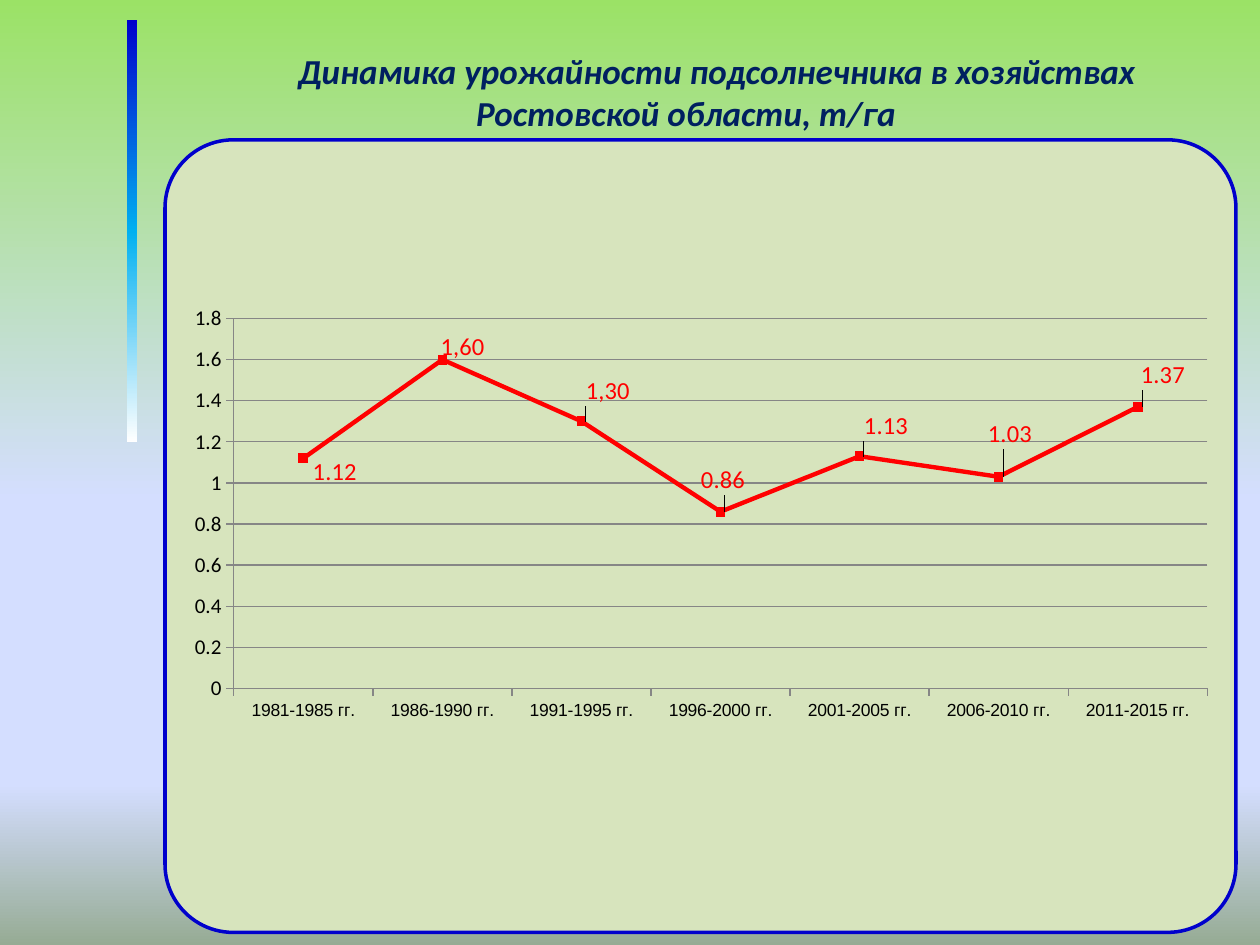
from lxml import etree
from pptx import Presentation
from pptx.chart.data import CategoryChartData
from pptx.dml.color import RGBColor
from pptx.enum import chart as ch, shapes, text
from pptx.oxml.ns import qn
from pptx.util import Inches, Pt

TITLE = "Динамика урожайности подсолнечника в хозяйствах Ростовской области, т/га"
# period, yield, custom label, label shift in inches
ROWS = [
    ("1981-1985 гг.", 1.12, None, (0, 0.11)),
    ("1986-1990 гг.", 1.6, "1,60", (-0.09, -0.1)),
    ("1991-1995 гг.", 1.3, "1,30", (-0.04, -0.24)),
    ("1996-2000 гг.", 0.86, None, (-0.23, -0.25)),
    ("2001-2005 гг.", 1.13, None, (-0.04, -0.24)),
    ("2006-2010 гг.", 1.03, None, (-0.16, -0.34)),
    ("2011-2015 гг.", 1.37, None, (-0.05, -0.25)),
]
SKY = [(0, "9BE266"), (53, "D4DEFF"), (83, "D4DEFF"), (100, "96AB94")]
BAR = [(0, "0000CC"), (50, "00B0F0"), (100, "FFFFFF")]
PLOT = {"x": 0.056, "y": 0.122, "w": 0.909, "h": 0.704}
WIDE, HIGH = 8.5, 4.17
NAVY = RGBColor(0x00, 0x20, 0x60)
BLUE = RGBColor(0x00, 0x00, 0xCC)
SAGE = RGBColor(0xD7, 0xE4, 0xBD)
RED = RGBColor(0xFF, 0x00, 0x00)
GREY = RGBColor(0x86, 0x86, 0x86)
BLACK = RGBColor(0, 0, 0)


def box(*nums):
    return [Inches(n) for n in nums]


def shade(fill, root, stops):
    """Give fill a top-to-bottom gradient; root is the element that holds it."""
    fill.gradient()
    fill.gradient_angle = 270
    group = root.find(".//" + qn("a:gsLst"))
    for old in list(group):
        group.remove(old)
    for pos, color in stops:
        stop = etree.SubElement(group, qn("a:gs"), pos=str(pos * 1000))
        etree.SubElement(stop, qn("a:srgbClr"), val=color)


def style(font, name, size, color):
    font.name, font.size = name, Pt(size)
    font.color.rgb = color


def layout(parts):
    """Make a manual chart layout from (tag, value) pairs."""
    node = etree.Element(qn("c:layout"))
    inner = etree.SubElement(node, qn("c:manualLayout"))
    for tag, val in parts:
        etree.SubElement(inner, qn("c:" + tag), val=str(val))
    return node


def add_title(slide):
    title = slide.shapes.title
    title.left, title.top, title.width, title.height = box(1.09, 0.34, 8.71, 0.77)
    frame = title.text_frame
    frame.text = TITLE
    frame.word_wrap = True
    frame.auto_size = text.MSO_AUTO_SIZE.NONE
    frame.vertical_anchor = text.MSO_ANCHOR.MIDDLE
    para = frame.paragraphs[0]
    para.alignment = text.PP_ALIGN.CENTER
    para.line_spacing = 1.0
    props = para._p.get_or_add_pPr()
    props.set("marL", "0")
    props.set("indent", str(Inches(0.49)))
    font = para.runs[0].font
    style(font, "Calibri", 20, NAVY)
    font.bold = font.italic = True


def add_panels(slide):
    bar = slide.shapes.add_shape(shapes.MSO_SHAPE.RECTANGLE, *box(1.01, 0.16, 0.08, 3.35))
    bar.shadow.inherit = False
    shade(bar.fill, bar._element, BAR)
    bar.line.fill.background()
    panel = slide.shapes.add_shape(
        shapes.MSO_SHAPE.ROUNDED_RECTANGLE, *box(1.31, 1.11, 8.5, 6.29))
    panel.adjustments[0] = 0.086
    panel.shadow.inherit = False
    panel.fill.solid()
    panel.fill.fore_color.rgb = SAGE
    panel.line.color.rgb = BLUE
    panel.line.width = Pt(2)


def add_labels(line):
    for i, (_, _, words, (dx, dy)) in enumerate(ROWS):
        label = line.points[i].data_label
        if words:
            label.text_frame.text = words
            font = label.text_frame.paragraphs[0].runs[0].font
        else:
            font = label.font
        style(font, "Calibri", 14, RED)
        label.position = ch.XL_LABEL_POSITION.RIGHT
        node = line._element.findall(".//" + qn("c:dLbl"))[i]
        node.insert(1, layout([("x", round(dx / WIDE, 4)), ("y", round(dy / HIGH, 4))]))


def add_chart(slide):
    data = CategoryChartData()
    data.categories = [row[0] for row in ROWS]
    data.add_series("Series 1", [row[1] for row in ROWS])
    chart = slide.shapes.add_chart(
        ch.XL_CHART_TYPE.LINE_MARKERS, *box(1.38, 2.02, WIDE, HIGH), data).chart
    chart.has_legend = chart.has_title = False
    style(chart.font, "Calibri", 18, BLACK)
    plot = chart.plots[0]
    plot.vary_by_categories = False
    cats, vals = chart.category_axis, chart.value_axis
    for axis, name, size in ((cats, "Arial", 10), (vals, "Calibri", 12)):
        style(axis.tick_labels.font, name, size, BLACK)
        axis.format.line.color.rgb = GREY
        axis.major_tick_mark = ch.XL_TICK_MARK.OUTSIDE
    vals.minimum_scale, vals.maximum_scale, vals.major_unit = 0, 1.8, 0.2
    vals.has_major_gridlines = True
    vals.major_gridlines.format.line.color.rgb = GREY

    line = plot.series[0]
    line.smooth = False
    line.format.line.color.rgb = RED
    line.format.line.width = Pt(2.5)
    mark = line.marker
    mark.style, mark.size = ch.XL_MARKER_STYLE.SQUARE, 5
    mark.format.fill.solid()
    mark.format.fill.fore_color.rgb = RED
    mark.format.line.color.rgb = RED
    add_labels(line)

    area = chart._chartSpace.find(".//" + qn("c:plotArea"))
    for old in area.findall(qn("c:layout")):
        area.remove(old)
    modes = [("layoutTarget", "inner"), ("xMode", "edge"), ("yMode", "edge")]
    area.insert(0, layout(modes + list(PLOT.items())))


def main():
    deck = Presentation()
    deck.slide_width, deck.slide_height = box(10, 7.5)
    slide = deck.slides.add_slide(deck.slide_layouts[5])
    shade(slide.background.fill, slide.element, SKY)
    add_title(slide)
    add_panels(slide)
    add_chart(slide)
    deck.save("out.pptx")


if __name__ == "__main__":
    main()
